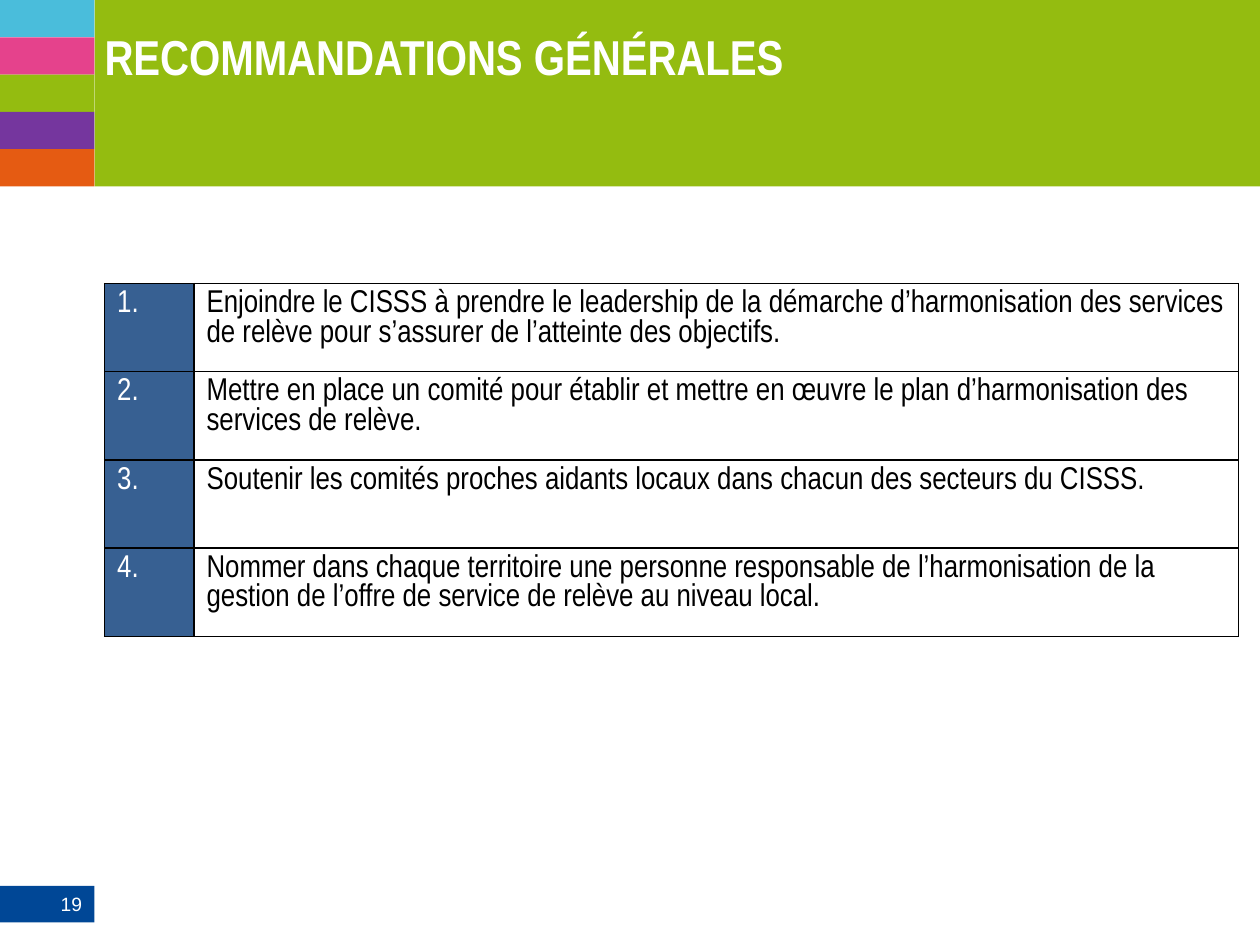
from pptx import Presentation
from pptx.dml.color import RGBColor
from pptx.enum.shapes import MSO_SHAPE
from pptx.enum.text import MSO_ANCHOR, MSO_AUTO_SIZE, PP_ALIGN
from pptx.oxml import parse_xml
from pptx.oxml.ns import nsdecls
from pptx.util import Inches, Pt

TITLE = "RECOMMANDATIONS GÉNÉRALES"
PAGE_NUMBER = "19"
RECOMMENDATIONS = [
    "Enjoindre le CISSS à prendre le leadership de la démarche d’harmonisation des services de relève pour s’assurer de l’atteinte des objectifs.",
    "Mettre en place un comité pour établir et mettre en œuvre le plan d’harmonisation des services de relève.",
    "Soutenir les comités proches aidants locaux dans chacun des secteurs du CISSS.",
    "Nommer dans chaque territoire une personne responsable de l’harmonisation de la gestion de l’offre de service de relève au niveau local.",
]
STRIPES = ["4ABDDB", "E5428C", "94BC10", "75369E", "E55B12"]
GREEN, BLUE, NAVY, WHITE, BLACK = "94BC10", "004796", "376092", "FFFFFF", "000000"
WIDTH, HEIGHT = 10, 7.5
SIDE, BANNER = 0.75, 1.48
LEFT = 0.83
COLUMNS = [0.71, 8.29]
ROW = 0.7
TITLE_FONT = dict(name="Arial Narrow", size=Pt(28), bold=True)
TABLE_FONT = dict(name="Arial Narrow", size=Pt(18), bold=False)
NUMBER_FONT = dict(name="Arial", size=Pt(11), bold=False)


def color(value):
    return RGBColor.from_string(value)


def set_all(target, values):
    for name, value in values.items():
        setattr(target, name, value)


def write(frame, text, font, ink, alignment=PP_ALIGN.LEFT):
    para = frame.paragraphs[0]
    para.alignment = alignment
    span = para.add_run()
    span.text = text
    set_all(span.font, font)
    span.font.color.rgb = color(ink)


def add_bar(page, left, top, width, height, fill):
    bar = page.shapes.add_shape(MSO_SHAPE.RECTANGLE, *map(Inches, (left, top, width, height)))
    bar.shadow.inherit = False
    bar.fill.solid()
    bar.fill.fore_color.rgb = color(fill)
    bar.line.fill.background()
    return bar


def add_borders(cell):
    properties = cell._tc.get_or_add_tcPr()
    for side in "LRTB":
        properties.append(parse_xml(
            f'<a:ln{side} {nsdecls("a")} w="{Pt(1)}"><a:solidFill>'
            f'<a:srgbClr val="{BLACK}"/></a:solidFill></a:ln{side}>'))


def add_banner(page):
    add_bar(page, SIDE, 0, WIDTH - SIDE, BANNER, GREEN)
    number = add_bar(page, 0, 7.03, SIDE, 0.29, BLUE)
    number.text_frame.vertical_anchor = MSO_ANCHOR.MIDDLE
    write(number.text_frame, PAGE_NUMBER, NUMBER_FONT, WHITE, PP_ALIGN.RIGHT)
    stripe = BANNER / len(STRIPES)
    for index, fill in enumerate(STRIPES):
        add_bar(page, 0, index * stripe, SIDE, stripe, fill)


def add_title(page):
    title = page.shapes.title
    set_all(title, dict(left=Inches(LEFT), top=Inches(0.21), width=Inches(6.54), height=Inches(0.85)))
    frame = title.text_frame
    set_all(frame, dict(margin_left=0, margin_top=0, margin_right=0, margin_bottom=0,
                        word_wrap=True, auto_size=MSO_AUTO_SIZE.NONE,
                        vertical_anchor=MSO_ANCHOR.TOP))
    write(frame, TITLE, TITLE_FONT, WHITE)
    page.shapes._spTree.append(title._element)


def add_recommendations(page):
    count = len(RECOMMENDATIONS)
    table = page.shapes.add_table(count, len(COLUMNS), Inches(LEFT), Inches(2.25),
                                  Inches(sum(COLUMNS)), Inches(ROW * count)).table
    set_all(table, dict(first_row=False, horz_banding=False))
    for column, width in zip(table.columns, COLUMNS):
        column.width = Inches(width)
    for index, text in enumerate(RECOMMENDATIONS):
        number, advice = table.rows[index].cells
        for cell, words, ink in ((number, f"{index + 1}.", WHITE), (advice, text, BLACK)):
            add_borders(cell)
            write(cell.text_frame, words, TABLE_FONT, ink)
        number.fill.solid()
        number.fill.fore_color.rgb = color(NAVY)
        advice.fill.background()


def main():
    deck = Presentation()
    set_all(deck, dict(slide_width=Inches(WIDTH), slide_height=Inches(HEIGHT)))
    page = deck.slides.add_slide(deck.slide_layouts[5])
    add_banner(page)
    add_title(page)
    add_recommendations(page)
    deck.save("out.pptx")


if __name__ == "__main__":
    main()
